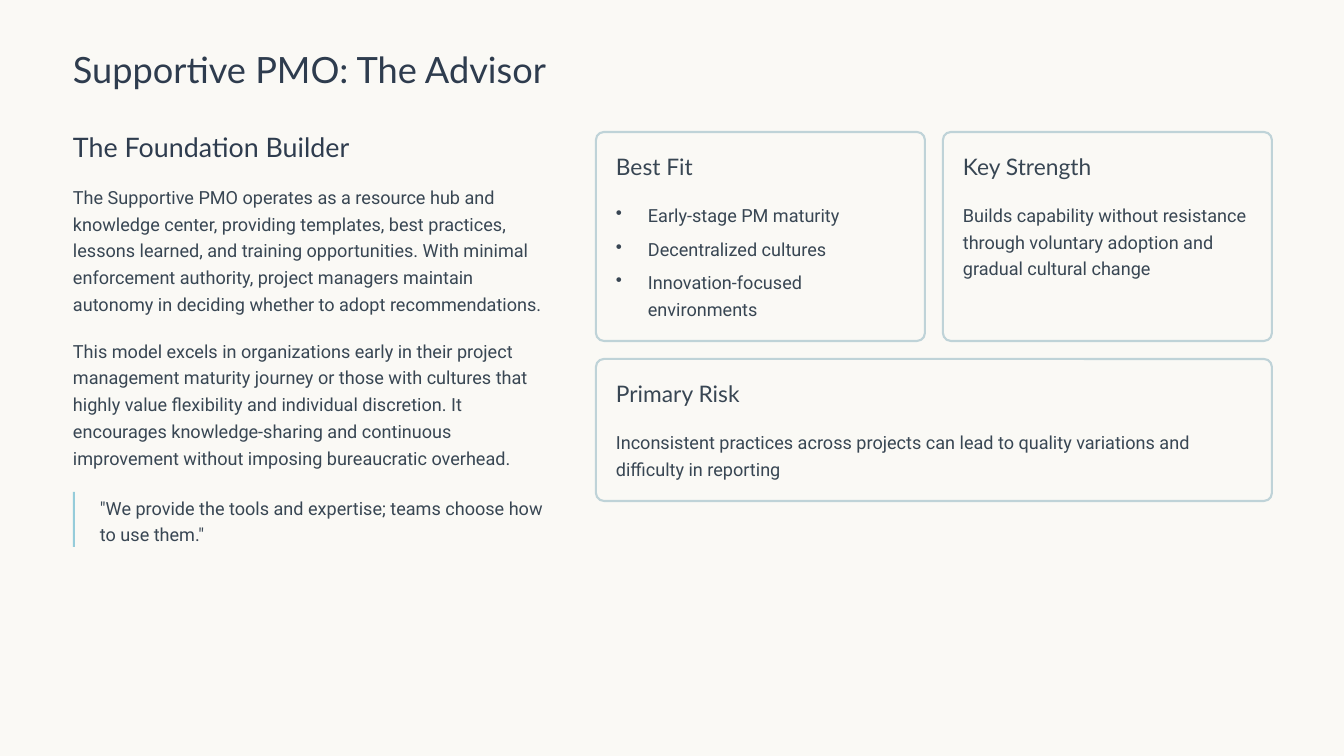
from pptx import Presentation
from pptx import util as u
from pptx.dml.color import RGBColor
from pptx.enum import shapes, text
from pptx.oxml.ns import qn
from lxml import etree

# Content
TITLE = "Supportive PMO: The Advisor"
SUBTITLE = "The Foundation Builder"
STORY = [
    "The Supportive PMO operates as a resource hub and knowledge center, providing templates, "
    "best practices, lessons learned, and training opportunities. With minimal enforcement "
    "authority, project managers maintain autonomy in deciding whether to adopt recommendations.",
    "This model excels in organizations early in their project management maturity journey or "
    "those with cultures that highly value flexibility and individual discretion. It encourages "
    "knowledge-sharing and continuous improvement without imposing bureaucratic overhead.",
]
QUOTE = '"We provide the tools and expertise; teams choose how to use them."'
# Heading, lines, bulleted, column, row, columns spanned
CARDS = [
    ("Best Fit", ["Early-stage PM maturity", "Decentralized cultures",
                  "Innovation-focused environments"], True, 0, 0, 1),
    ("Key Strength", ["Builds capability without resistance through voluntary adoption and "
                      "gradual cultural change"], False, 1, 0, 1),
    ("Primary Risk", ["Inconsistent practices across projects can lead to quality variations "
                      "and difficulty in reporting"], False, 0, 1, 2),
]

COLORS = {"paper": "FAF9F5", "title": "2E3C4E", "body": "384653",
          "bar": "95CCDA", "border": "BFD3D8"}
# Font, size, line spacing in points, colour
STYLES = {
    "title": ("Lato", 31, 39, "title"),
    "subtitle": ("Lato", 23, 29, "title"),
    "heading": ("Lato", 19.5, 24, "body"),
    "body": ("Roboto", 15.5, 23, "body"),
}

# Layout in px
PX = u.Inches(1) // 84
LEFT, STORY_TOP, STORY_WIDTH, STORY_HEIGHT, STORY_GAP = 73, 181, 477, 137, 17
QUOTE_TOP, QUOTE_HEIGHT, QUOTE_INDENT, BAR_WIDTH = 492, 55, 27, 2
CARDS_LEFT, CARDS_TOP, CARD_WIDTH, CARD_GAP = 596, 132, 329, 18
ROW_HEIGHTS = [209, 142]
PAD, BODY_OFFSET, RADIUS, BULLET_INDENT = 20, 67, 8, 32


def color(name):
    return RGBColor.from_string(COLORS[name])


def place(shape, *box):
    shape.left, shape.top, shape.width, shape.height = (v * PX for v in box)


def write(shape, lines, style, bulleted=False):
    font, size, spacing, ink = STYLES[style]
    frame = shape.text_frame
    frame.word_wrap = True
    frame.auto_size = text.MSO_AUTO_SIZE.NONE
    frame.vertical_anchor = text.MSO_ANCHOR.TOP
    frame.margin_left = frame.margin_right = frame.margin_top = frame.margin_bottom = 0
    frame.text = "\n".join(lines)
    for index, para in enumerate(frame.paragraphs):
        para.alignment = text.PP_ALIGN.LEFT
        para.line_spacing = u.Pt(spacing)
        para.space_before = u.Pt(6 if index else 0)
        if bulleted:
            props = para._p.get_or_add_pPr()
            props.set("marL", str(BULLET_INDENT * PX))
            props.set("indent", str(-BULLET_INDENT * PX))
            etree.SubElement(props, qn("a:buChar")).set("char", "•")
        for span in para.runs:
            span.font.name, span.font.size = font, u.Pt(size)
            span.font.color.rgb = color(ink)


def add_text(page, box, lines, style, bulleted=False):
    write(page.shapes.add_textbox(*(v * PX for v in box)), lines, style, bulleted)


def add_box(page, kind, box, fill):
    shape = page.shapes.add_shape(kind, *(v * PX for v in box))
    shape.shadow.inherit = False
    shape.fill.solid()
    shape.fill.fore_color.rgb = color(fill)
    shape.line.fill.background()
    return shape


def add_card(page, heading, lines, bulleted, column, row, span):
    x = CARDS_LEFT + column * (CARD_WIDTH + CARD_GAP)
    y = CARDS_TOP + sum(ROW_HEIGHTS[:row]) + row * CARD_GAP
    width = span * CARD_WIDTH + (span - 1) * CARD_GAP
    height = ROW_HEIGHTS[row]
    card = add_box(page, shapes.MSO_SHAPE.ROUNDED_RECTANGLE, (x, y, width, height), "paper")
    card.adjustments[0] = RADIUS / height
    card.line.color.rgb = color("border")
    card.line.width = u.Pt(1.8)
    inner = width - 2 * PAD
    add_text(page, (x + PAD, y + PAD, inner, 29), [heading], "heading")
    body = (x + PAD, y + BODY_OFFSET, inner, height - BODY_OFFSET - PAD)
    add_text(page, body, lines, "body", bulleted)


def main():
    deck = Presentation()
    deck.slide_width, deck.slide_height = u.Inches(16), u.Inches(9)
    page = deck.slides.add_slide(deck.slide_layouts[5])
    page.background.fill.solid()
    page.background.fill.fore_color.rgb = color("paper")

    # Title and left column
    place(page.shapes.title, LEFT, 45, 1198, 45)
    write(page.shapes.title, [TITLE], "title")
    add_text(page, (LEFT, 129, STORY_WIDTH, 34), [SUBTITLE], "subtitle")
    for index, story in enumerate(STORY):
        top = STORY_TOP + index * (STORY_HEIGHT + STORY_GAP)
        add_text(page, (LEFT, top, STORY_WIDTH, STORY_HEIGHT), [story], "body")

    # Quote with its bar
    quote_box = (LEFT + QUOTE_INDENT, QUOTE_TOP, STORY_WIDTH - QUOTE_INDENT, QUOTE_HEIGHT)
    add_text(page, quote_box, [QUOTE], "body")
    bar_box = (LEFT, QUOTE_TOP, BAR_WIDTH, QUOTE_HEIGHT)
    add_box(page, shapes.MSO_SHAPE.RECTANGLE, bar_box, "bar")

    # Cards
    for card in CARDS:
        add_card(page, *card)
    deck.save("out.pptx")


if __name__ == "__main__":
    main()
